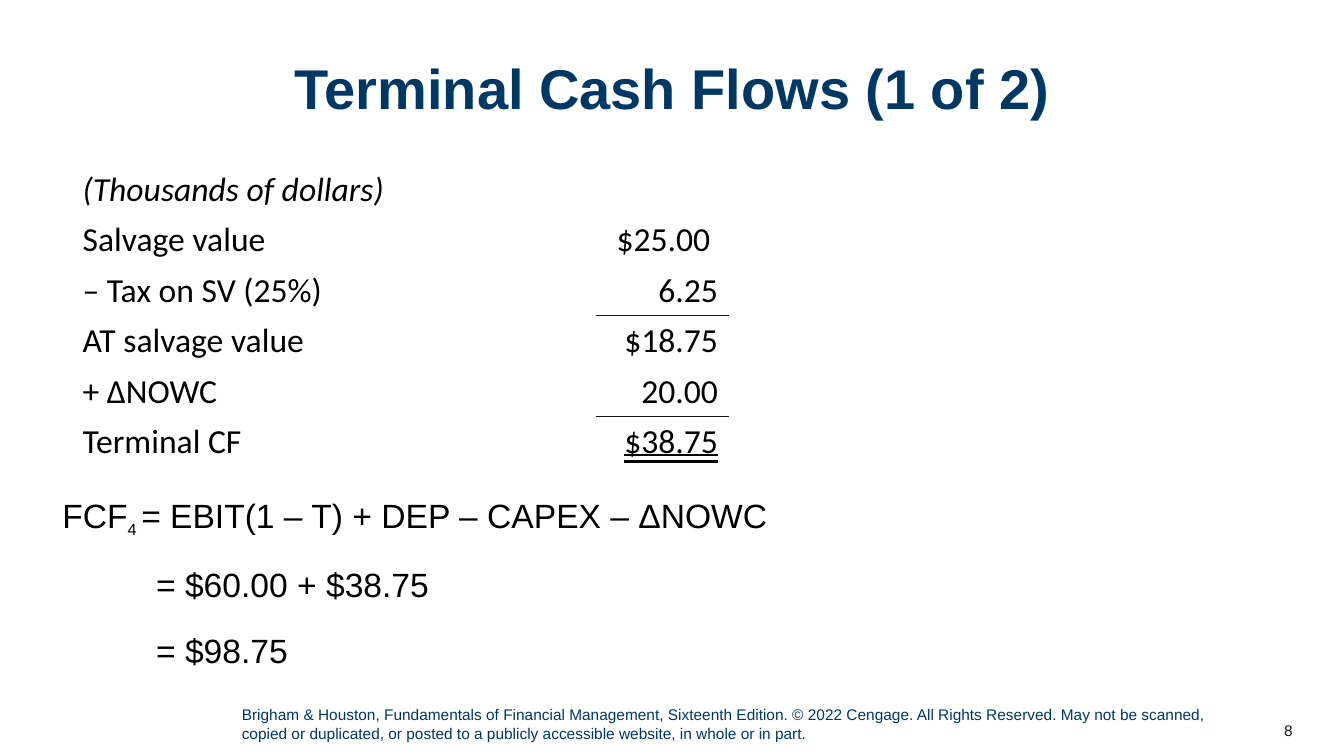
import pptx
import pptx.dml.color
import pptx.enum.text
import pptx.oxml
import pptx.oxml.ns
import pptx.util

WIDTH, HEIGHT = 13.33, 7.5
NAVY, INK, BLACK, WHITE = "003865", "181717", "000000", "FFFFFF"
ALIGN = pptx.enum.text.PP_ALIGN
ANCHOR = pptx.enum.text.MSO_ANCHOR
DOUBLE = pptx.enum.text.MSO_UNDERLINE.DOUBLE_LINE
CASH_FLOWS = [
    ("(Thousands of dollars)", ""),
    ("Salvage value", "$25.00 "),
    ("– Tax on SV (25%)", "6.25"),
    ("AT salvage value", "$18.75"),
    ("+ ΔNOWC", "20.00"),
    ("Terminal CF", "$38.75"),
]
SUBTOTALS = (3, 5)
FORMULA = [
    [("FCF", 24, 0), ("4 ", 20, -25), ("= EBIT(1 – T) + DEP – CAPEX – ΔNOWC", 24, 0)],
    [("= $60.00 + $38.75", 24, 0)],
    [("= $98.75", 24, 0)],
]


def colour(value):
    """Turn a hex string into a colour."""
    return pptx.dml.color.RGBColor.from_string(value)


def inches(*lengths):
    """Turn lengths in inches into slide units."""
    return [pptx.util.Inches(length) for length in lengths]


def assign(target, values):
    """Set each named attribute of the target."""
    for name, value in values.items():
        setattr(target, name, value)


def add_span(para, text, size, shade, face="Arial", **style):
    """Append formatted text to a paragraph."""
    span = para.add_run()
    span.text = text
    assign(span.font, {"name": face, "size": pptx.util.Pt(size), **style})
    span.font.color.rgb = colour(shade)
    return span


def add_frame(page, box, **style):
    """Add a wrapping text box and return its text frame."""
    frame = page.shapes.add_textbox(*inches(*box)).text_frame
    assign(frame, {"word_wrap": True, **style})
    return frame


def add_title(page, box):
    """Place the centred heading."""
    para = add_frame(page, box, margin_top=pptx.util.Inches(0.09)).paragraphs[0]
    assign(para, {"alignment": ALIGN.CENTER, "line_spacing": 0.9})
    add_span(para, "Terminal Cash Flows (1 of 2)", 40, NAVY, bold=True)


def add_edge(cell, side, shade):
    """Draw one border of a table cell."""
    edge = pptx.oxml.parse_xml(
        f'<a:ln{side} {pptx.oxml.ns.nsdecls("a")} w="12700"><a:solidFill>'
        f'<a:srgbClr val="{shade}"/></a:solidFill></a:ln{side}>'
    )
    cell._tc.get_or_add_tcPr().append(edge)


def add_cash_flows(page, box):
    """Place the table of cash flows with a rule above each subtotal."""
    count = len(CASH_FLOWS)
    table = page.shapes.add_table(count, 2, *inches(*box)).table
    assign(table, {"first_row": False, "horz_banding": False})
    for column, share in zip(table.columns, (0.8, 0.2)):
        column.width = pptx.util.Inches(box[2] * share)
    for row, texts in enumerate(CASH_FLOWS):
        for column, text in enumerate(texts):
            cell = table.cell(row, column)
            ruled = {"T": row in SUBTOTALS, "B": row + 1 in SUBTOTALS}
            for side in "LRTB":
                add_edge(cell, side, INK if column and ruled.get(side) else WHITE)
            cell.fill.background()
            para = cell.text_frame.paragraphs[0]
            para.alignment = ALIGN.RIGHT if column else ALIGN.LEFT
            if text:
                total = column == 1 and row == count - 1
                add_span(para, text, 24, BLACK, "Calibri", bold=False,
                         italic=row == 0, underline=DOUBLE if total else None)


def add_formula(page, box):
    """Place the free cash flow formula with its indented steps."""
    frame = add_frame(page, box, margin_top=pptx.util.Inches(0.09))
    for index, spans in enumerate(FORMULA):
        para = frame.add_paragraph() if index else frame.paragraphs[0]
        if index:
            para._p.get_or_add_pPr().set("marL", str(pptx.util.Inches(0.93)))
        assign(para, {"space_before": pptx.util.Pt(10 if index else 0),
                      "space_after": pptx.util.Pt(8)})
        for text, size, baseline in spans:
            span = add_span(para, text, size, BLACK)
            if baseline:
                span._r.get_or_add_rPr().set("baseline", str(baseline * 1000))


def add_footer(page, box):
    """Place the copyright line and the page number after it."""
    left, top, width, height = box
    credit = add_frame(page, box).paragraphs[0]
    add_span(credit, "Brigham & Houston, Fundamentals of Financial Management, "
             "Sixteenth Edition. © 2022 Cengage. All Rights Reserved. May not be "
             "scanned, copied or duplicated, or posted to a publicly accessible "
             "website, in whole or in part.", 11, NAVY)
    number_box = (left + width + 0.02, top + 0.1, 0.8, 0.4)
    number = add_frame(page, number_box, vertical_anchor=ANCHOR.MIDDLE).paragraphs[0]
    number.alignment = ALIGN.RIGHT
    add_span(number, "8", 11, INK)


def main():
    """Build the slide and save the deck."""
    deck = pptx.Presentation()
    deck.slide_width, deck.slide_height = inches(WIDTH, HEIGHT)
    page = deck.slides.add_slide(deck.slide_layouts[6])
    margin = 0.52
    content = WIDTH - 2 * margin
    add_footer(page, (2.3, 6.95, 9.8, 0.47))
    add_title(page, (margin, margin, content, 1.33))
    add_cash_flows(page, (margin + 0.2, 1.63, 6.5, 3))
    add_formula(page, (margin, 4.82, content, 1.89))
    deck.save("out.pptx")


if __name__ == "__main__":
    main()
